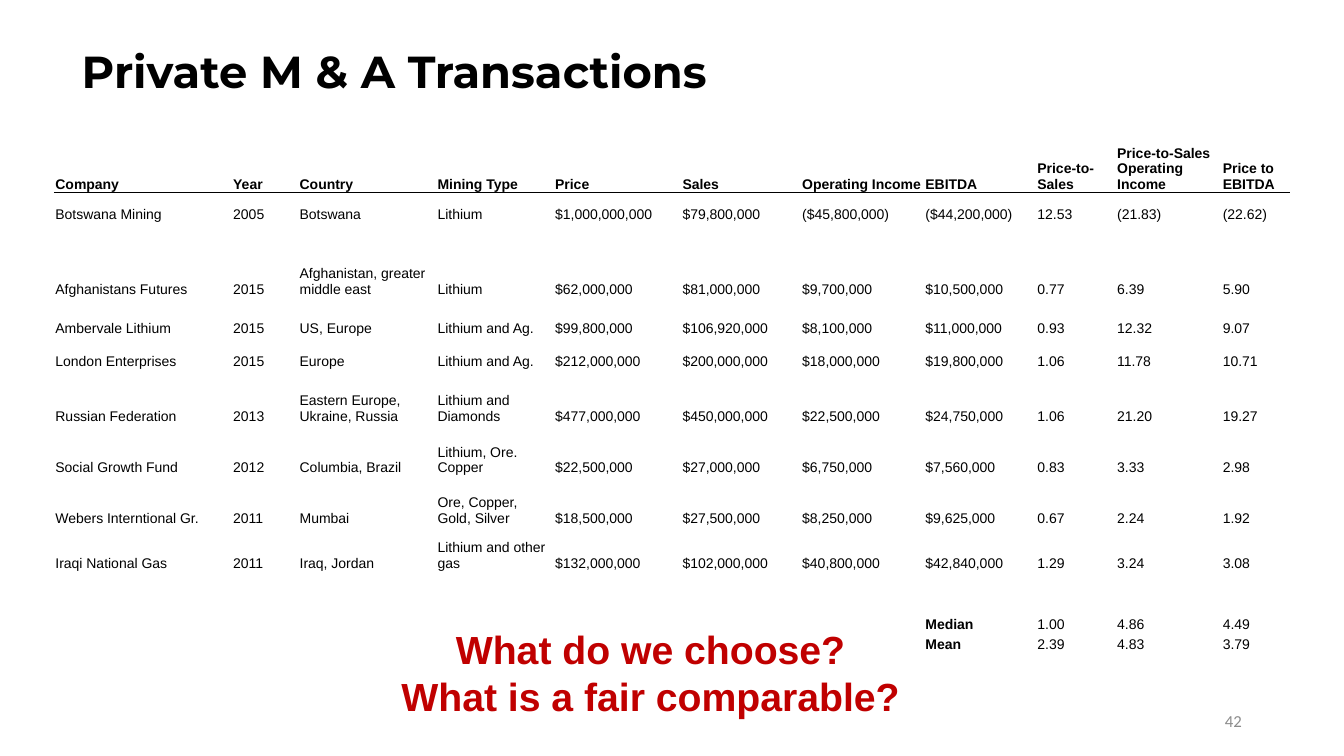
import dataclasses

import lxml.etree
import pptx
import pptx.dml.color
import pptx.enum.text
import pptx.oxml.ns
import pptx.util

Pt = pptx.util.Pt
ALIGN = pptx.enum.text.PP_ALIGN
ANCHOR = pptx.enum.text.MSO_ANCHOR
COLORS = {"ink": "000000", "paper": "FFFFFF", "red": "C00000", "gray": "8C8C8C"}

WIDTHS = [127, 47.5, 98.5, 84, 91, 85.5, 88, 80, 57, 75.5, 48]
BLANK = [""] * len(WIDTHS)
INDENT = [""] * 7


@dataclasses.dataclass
class Face:
    name: str
    size: float
    color: str
    bold: bool = False


@dataclasses.dataclass
class Row:
    height: float
    cells: list[str]


@dataclasses.dataclass
class Note:
    box: tuple[float, float, float, float]
    lines: list[str]
    face: Face
    align: int
    anchor: int


PLAIN = Face("Arial", 10, "ink")
STRONG = Face("Arial", 10, "ink", True)
HEAD = Face("Montserrat", 32, "ink", True)

ROWS = [
    Row(61.2, ["Company", "Year", "Country", "Mining Type", "Price", "Sales",
               "Operating Income", "EBITDA", "Price-to-Sales",
               "Price-to-Sales Operating Income", "Price to EBITDA"]),
    Row(21.6, ["Botswana Mining", "2005", "Botswana", "Lithium", "$1,000,000,000",
               "$79,800,000", "($45,800,000)", "($44,200,000)", "12.53", "(21.83)", "(22.62)"]),
    Row(53.3, ["Afghanistans Futures", "2015", "Afghanistan, greater middle east", "Lithium",
               "$62,000,000", "$81,000,000", "$9,700,000", "$10,500,000", "0.77", "6.39", "5.90"]),
    Row(28.1, ["Ambervale Lithium", "2015", "US, Europe", "Lithium and Ag.", "$99,800,000",
               "$106,920,000", "$8,100,000", "$11,000,000", "0.93", "12.32", "9.07"]),
    Row(23.8, ["London Enterprises", "2015", "Europe", "Lithium and Ag.", "$212,000,000",
               "$200,000,000", "$18,000,000", "$19,800,000", "1.06", "11.78", "10.71"]),
    Row(38.9, ["Russian Federation", "2013", "Eastern Europe, Ukraine, Russia",
               "Lithium and Diamonds", "$477,000,000", "$450,000,000", "$22,500,000",
               "$24,750,000", "1.06", "21.20", "19.27"]),
    Row(36.7, ["Social Growth Fund", "2012", "Columbia, Brazil", "Lithium, Ore. Copper",
               "$22,500,000", "$27,000,000", "$6,750,000", "$7,560,000", "0.83", "3.33", "2.98"]),
    Row(36, ["Webers Interntional Gr.", "2011", "Mumbai", "Ore, Copper, Gold, Silver",
             "$18,500,000", "$27,500,000", "$8,250,000", "$9,625,000", "0.67", "2.24", "1.92"]),
    Row(32.4, ["Iraqi National Gas", "2011", "Iraq, Jordan", "Lithium and other gas",
               "$132,000,000", "$102,000,000", "$40,800,000", "$42,840,000",
               "1.29", "3.24", "3.08"]),
    Row(14.4, BLANK),
    Row(14.4, BLANK),
    Row(14.4, INDENT + ["Median", "1.00", "4.86", "4.49"]),
    Row(14.4, INDENT + ["Mean", "2.39", "4.83", "3.79"]),
]

NOTES = [
    Note((224.6, 442.8, 480.2, 74.9), ["What do we choose?", "What is a fair comparable?"],
         Face("Arial", 28, "red", True), ALIGN.CENTER, ANCHOR.TOP),
    Note((678.2, 500.4, 216, 28.8), ["42"],
         Face("Calibri", 12, "gray"), ALIGN.RIGHT, ANCHOR.MIDDLE),
]


def shade(name: str) -> pptx.dml.color.RGBColor:
    return pptx.dml.color.RGBColor.from_string(COLORS[name])


def style(para, face: Face) -> None:
    font = para.font
    font.name, font.size, font.bold = face.name, Pt(face.size), face.bold
    font.color.rgb = shade(face.color)


def rule(cell, edge: str) -> None:
    """Draw a thin line on one edge of a cell."""
    name = pptx.oxml.ns.qn
    line = lxml.etree.Element(name(f"a:{edge}"), w=str(Pt(0.5)))
    fill = lxml.etree.SubElement(line, name("a:solidFill"))
    lxml.etree.SubElement(fill, name("a:srgbClr"), val=COLORS["ink"])
    cell._tc.get_or_add_tcPr().insert(0, line)


def fill_cell(cell, text: str, face: Face) -> None:
    cell.fill.solid()
    cell.fill.fore_color.rgb = shade("paper")
    cell.margin_left = cell.margin_right = cell.margin_top = Pt(0.72)
    cell.margin_bottom = Pt(0)
    cell.vertical_anchor = ANCHOR.BOTTOM
    para = cell.text_frame.paragraphs[0]
    style(para, face)
    if text:
        para.text = text
    else:
        # Keep empty rows as low as the text rows
        tag = pptx.oxml.ns.qn("a:endParaRPr")
        lxml.etree.SubElement(para._p, tag, sz=str(face.size * 100))


def add_grid(slide) -> None:
    high = sum(row.height for row in ROWS)
    frame = slide.shapes.add_table(len(ROWS), len(WIDTHS), Pt(38.9), Pt(76.3),
                                   Pt(sum(WIDTHS)), Pt(high))
    grid = frame.table
    grid.first_row = grid.horz_banding = False
    for col, width in zip(grid.columns, WIDTHS):
        col.width = Pt(width)
    for top, row in enumerate(ROWS):
        grid.rows[top].height = Pt(row.height)
        for left, text in enumerate(row.cells):
            cell = grid.cell(top, left)
            strong = top == 0 or text in ("Median", "Mean")
            fill_cell(cell, text, STRONG if strong else PLAIN)
            if top < 2:
                rule(cell, "lnT" if top else "lnB")


def add_note(slide, note: Note) -> None:
    frame = slide.shapes.add_textbox(*map(Pt, note.box)).text_frame
    frame.word_wrap = True
    frame.vertical_anchor = note.anchor
    frame.text = "\n".join(note.lines)
    for para in frame.paragraphs:
        para.alignment = note.align
        style(para, note.face)


def add_title(slide) -> None:
    title = slide.shapes.title
    title.left, title.top, title.width, title.height = map(Pt, (51.1, 0.7, 828, 104.4))
    frame = title.text_frame
    frame.text = "Private M & A Transactions"
    frame.auto_size = pptx.enum.text.MSO_AUTO_SIZE.NONE
    frame.vertical_anchor = ANCHOR.MIDDLE
    para = frame.paragraphs[0]
    para.alignment = ALIGN.LEFT
    para.line_spacing = 0.9
    style(para, HEAD)


def main() -> None:
    deck = pptx.Presentation()
    deck.slide_width, deck.slide_height = Pt(960), Pt(540)
    slide = deck.slides.add_slide(deck.slide_layouts[5])
    # Heading, deal table, then the question and page number
    add_title(slide)
    add_grid(slide)
    for note in NOTES:
        add_note(slide, note)
    deck.save("out.pptx")


if __name__ == "__main__":
    main()
